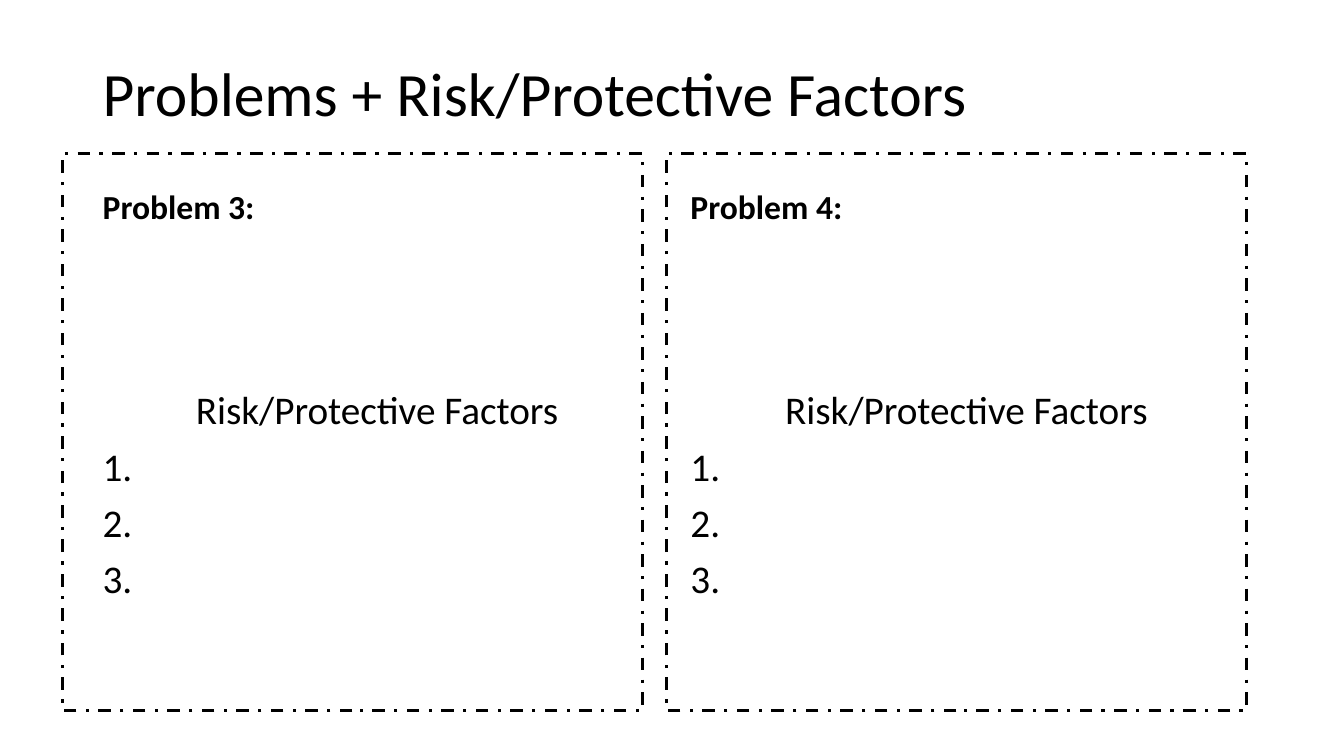
from lxml import etree
from pptx import Presentation
from pptx.dml.color import RGBColor
from pptx.enum import dml, shapes, text
from pptx.oxml.ns import qn
from pptx.util import Inches, Pt

TITLE = "Problems + Risk/Protective Factors"
FACTORS_HEADING = "Risk/Protective Factors"
FACTOR_COUNT = 3
# heading, text left, text width, frame left
PROBLEMS = [
    ("Problem 3:", 0.92, 5.64, 0.62),
    ("Problem 4:", 6.75, 5.67, 6.61),
]
PROBLEM_TOP, PROBLEM_HEIGHT = 1.84, 1.99
FACTORS_TOP, FACTORS_HEIGHT = PROBLEM_TOP + PROBLEM_HEIGHT, 2.94
FRAME_TOP, FRAME_WIDTH, FRAME_HEIGHT = 1.52, 5.75, 5.53
THEME = {
    "font": "Calibri",
    "ink": RGBColor(0, 0, 0),
    "title": 44,
    "problem": 24,
    "factors": 28,
    "frame_line": 2.25,
}


def add_box(page, left, top, width, height, anchor=text.MSO_ANCHOR.TOP):
    box = page.shapes.add_textbox(*map(Inches, (left, top, width, height)))
    box.text_frame.word_wrap = True
    box.text_frame.vertical_anchor = anchor
    return box


def write(box, words, size, bold=False, align=text.PP_ALIGN.LEFT,
          before=10, numbered=False):
    """Add a paragraph, using the first one while it is still empty."""
    frame = box.text_frame
    para = frame.paragraphs[0]
    if para.runs:
        para = frame.add_paragraph()
    para.alignment = align
    para.line_spacing = 0.9
    para.space_before = Pt(before)
    span = para.add_run()
    span.text = words
    span.font.name = THEME["font"]
    span.font.size = Pt(size)
    span.font.bold = bold
    span.font.color.rgb = THEME["ink"]
    if numbered:
        props = para._p.get_or_add_pPr()
        props.set("marL", str(Inches(0.56)))
        props.set("indent", str(-Inches(0.56)))
        etree.SubElement(props, qn("a:buFont"), typeface=THEME["font"])
        etree.SubElement(props, qn("a:buAutoNum"), type="arabicPeriod")


def add_frame(page, left):
    frame = page.shapes.add_shape(
        shapes.MSO_SHAPE.RECTANGLE,
        *map(Inches, (left, FRAME_TOP, FRAME_WIDTH, FRAME_HEIGHT)))
    frame.shadow.inherit = False
    frame.fill.background()
    frame.line.color.rgb = THEME["ink"]
    frame.line.width = Pt(THEME["frame_line"])
    frame.line.dash_style = dml.MSO_LINE.DASH_DOT


def add_problem(page, heading, left, width, frame_left):
    problem = add_box(page, left, PROBLEM_TOP, width, PROBLEM_HEIGHT)
    write(problem, heading, THEME["problem"], bold=True)
    factors = add_box(page, left, FACTORS_TOP, width, FACTORS_HEIGHT)
    write(factors, FACTORS_HEADING, THEME["factors"],
          align=text.PP_ALIGN.CENTER)
    for _ in range(FACTOR_COUNT):
        write(factors, " ", THEME["factors"], numbered=True)
    add_frame(page, frame_left)


def main():
    deck = Presentation()
    deck.slide_width, deck.slide_height = Inches(13.33), Inches(7.5)
    page = deck.slides.add_slide(deck.slide_layouts[6])
    title = add_box(page, 0.92, 0.23, 11.5, 1.45, text.MSO_ANCHOR.MIDDLE)
    write(title, TITLE, THEME["title"], before=0)
    for problem in PROBLEMS:
        add_problem(page, *problem)
    deck.save("out.pptx")


if __name__ == "__main__":
    main()
